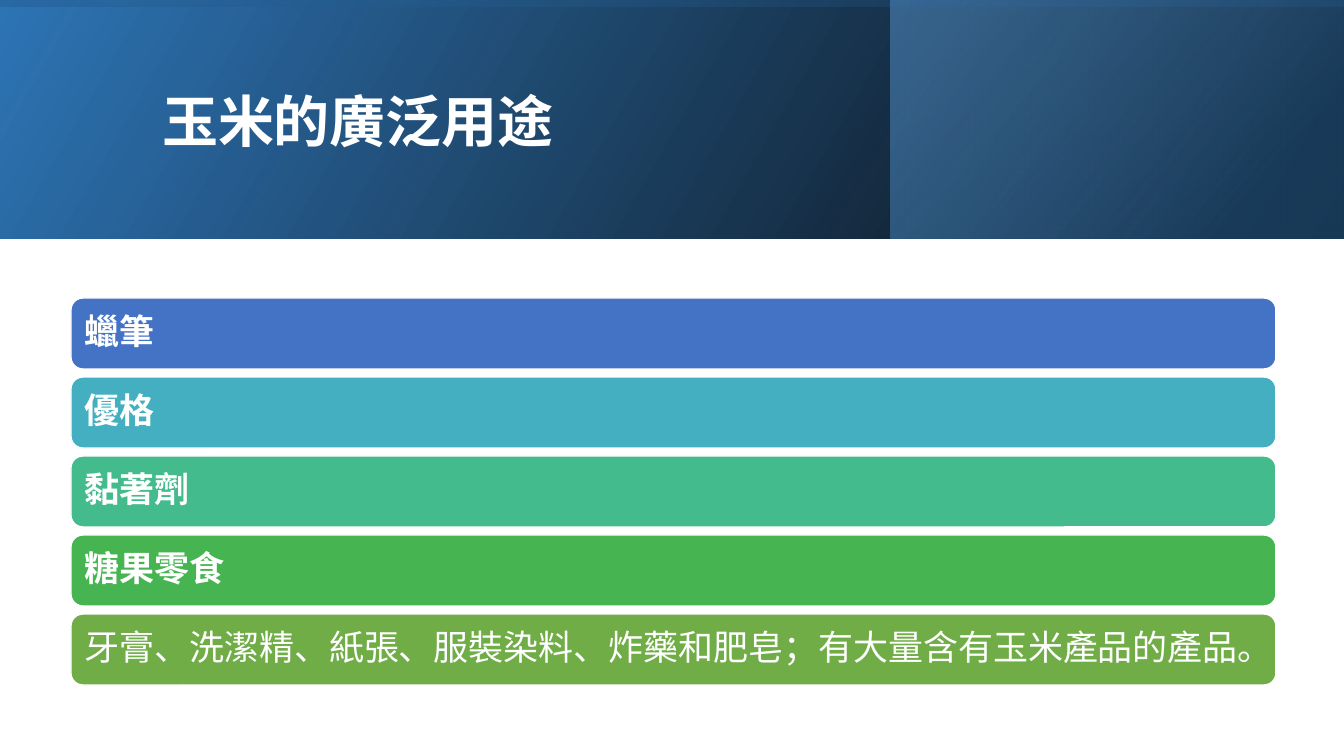
from pptx import Presentation
from pptx.dml.color import RGBColor
from pptx.enum.shapes import MSO_SHAPE
from pptx.enum.text import MSO_ANCHOR, MSO_AUTO_SIZE, PP_ALIGN
from pptx.oxml import parse_xml
from pptx.oxml.ns import nsdecls, qn
from pptx.util import Pt

RECT, ROUND = MSO_SHAPE.RECTANGLE, MSO_SHAPE.ROUNDED_RECTANGLE
MIDDLE, LEFT, NO_FIT = MSO_ANCHOR.MIDDLE, PP_ALIGN.LEFT, MSO_AUTO_SIZE.NONE
WIDE, HIGH, BAND = 1344, 756, 239

HUES = {
    "white": "FFFFFF", "black": "000000", "deep": "2E75B6",
    "navy": "1F4E79", "sky": "5B9BD5", "blue": "4472C4",
    "teal": "43AFC0", "mint": "43BB8D", "green": "45B451", "olive": "70AD47",
}


def px(n):
    return round(n * 12192000 / WIDE)


def write(shape, text, font, size, bold):
    """Put left-aligned white text in a shape, centred vertically."""
    frame = shape.text_frame
    frame.text = text
    frame.word_wrap = True
    frame.auto_size = NO_FIT
    frame.vertical_anchor = MIDDLE
    para = frame.paragraphs[0]
    para.alignment = LEFT
    para.line_spacing = 0.9
    face = para.runs[0].font
    face.name = font
    face.size = Pt(size)
    face.bold = bold
    face.color.rgb = RGBColor.from_string(HUES["white"])
    latin = next(shape.element.iter(qn("a:latin")))
    latin.addnext(parse_xml(f'<a:ea {nsdecls("a")} typeface="{font}"/>'))


prs = Presentation()
prs.slide_width, prs.slide_height = px(WIDE), px(HIGH)
slide = prs.slides.add_slide(prs.slide_layouts[5])
shapes = slide.shapes

# Header: three layered gradients; stops are (position, colour, opacity)
side = (WIDE - BAND) / 2
bands = [
    ((0, 0, WIDE, BAND), 0, 330, [(0, "black", 96), (100, "deep", 100)]),
    ((891, 0, 452, BAND), 0, 320, [(19, "navy", 68), (100, "sky", 48)]),
    ((side, -side, BAND, WIDE), 270, 350, [(23, "deep", 16), (99, "black", 45)]),
]
for box, turn, angle, stops in bands:
    band = shapes.add_shape(RECT, *map(px, box))
    band.shadow.inherit = False
    band.rotation = turn
    band.line.fill.background()
    band.fill.background()
    marks = "".join(
        f'<a:gs pos="{pos * 1000}"><a:srgbClr val="{HUES[hue]}">'
        f'<a:alpha val="{alpha * 1000}"/></a:srgbClr></a:gs>'
        for pos, hue, alpha in stops
    )
    grad = parse_xml(
        f'<a:gradFill {nsdecls("a")} rotWithShape="1"><a:gsLst>{marks}</a:gsLst>'
        f'<a:lin ang="{angle * 60000}" scaled="0"/></a:gradFill>'
    )
    props = band.element.spPr
    props.replace(props.find(qn("a:noFill")), grad)
    props.find(qn("a:xfrm")).set("flipH", "1")

# Title, brought in front of the header
title = shapes.title
title.left, title.top, title.width, title.height = map(px, (152, 38, 1071, 173))
write(title, "玉米的廣泛用途", "Open Sans", 40, True)
shapes.element.append(title.element)

# Bars of uses
uses = [
    ("蠟筆", "blue", True),
    ("優格", "teal", True),
    ("黏著劑", "mint", True),
    ("糖果零食", "green", True),
    ("牙膏、洗潔精、紙張、服裝染料、炸藥和肥皂；有大量含有玉米產品的產品。", "olive", False),
]
group = shapes.add_group_shape()
for row, (text, hue, bold) in enumerate(uses):
    bar = group.shapes.add_shape(ROUND, px(71), px(298 + 79 * row), px(1205), px(71))
    bar.shadow.inherit = False
    bar.fill.solid()
    bar.fill.fore_color.rgb = RGBColor.from_string(HUES[hue])
    bar.line.color.rgb = RGBColor.from_string(HUES["white"])
    bar.line.width = Pt(1)
    frame = bar.text_frame
    frame.margin_left = frame.margin_right = px(10)
    frame.margin_top = frame.margin_bottom = px(10)
    write(bar, text, "Calibri", 25, bold)

prs.save("out.pptx")
